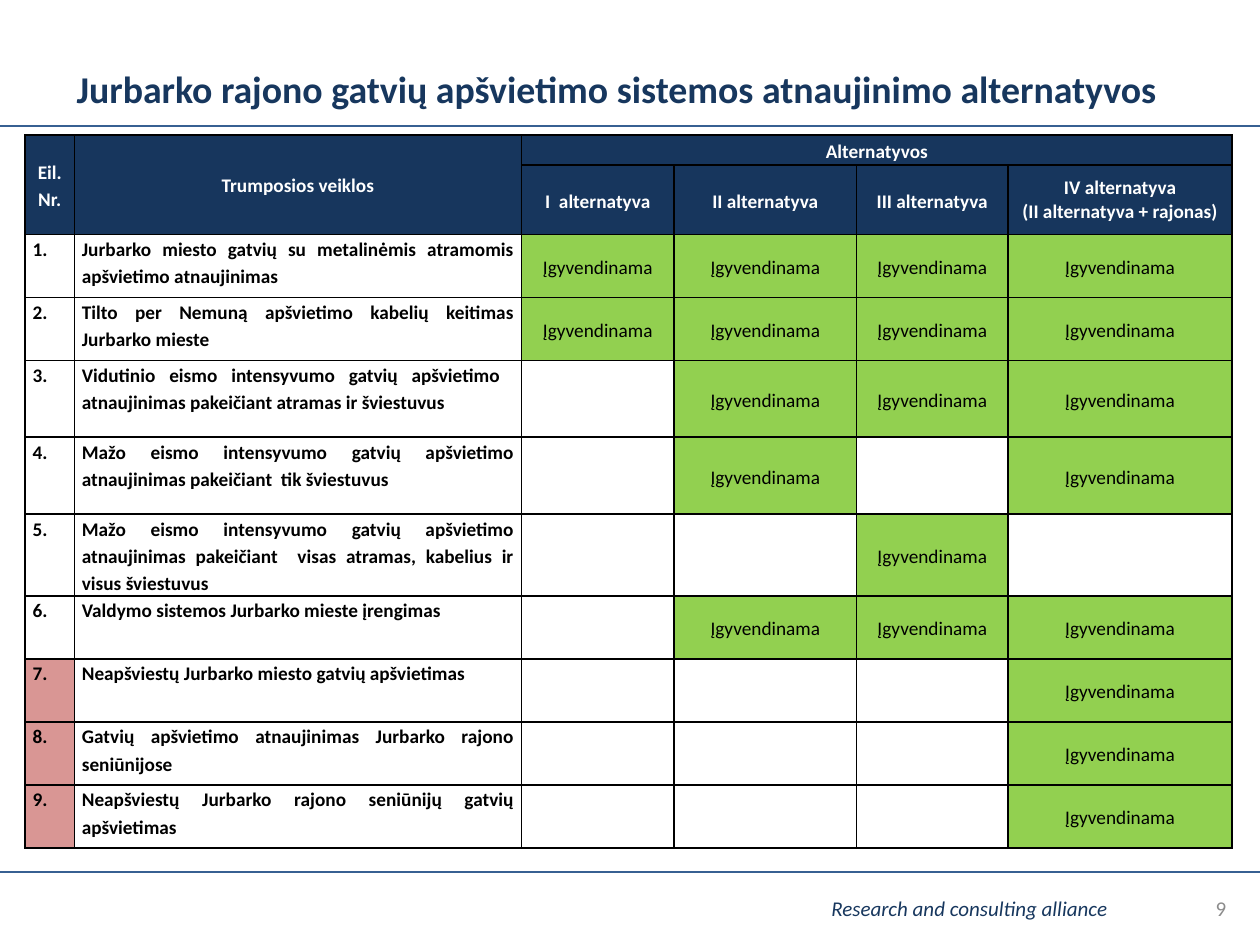
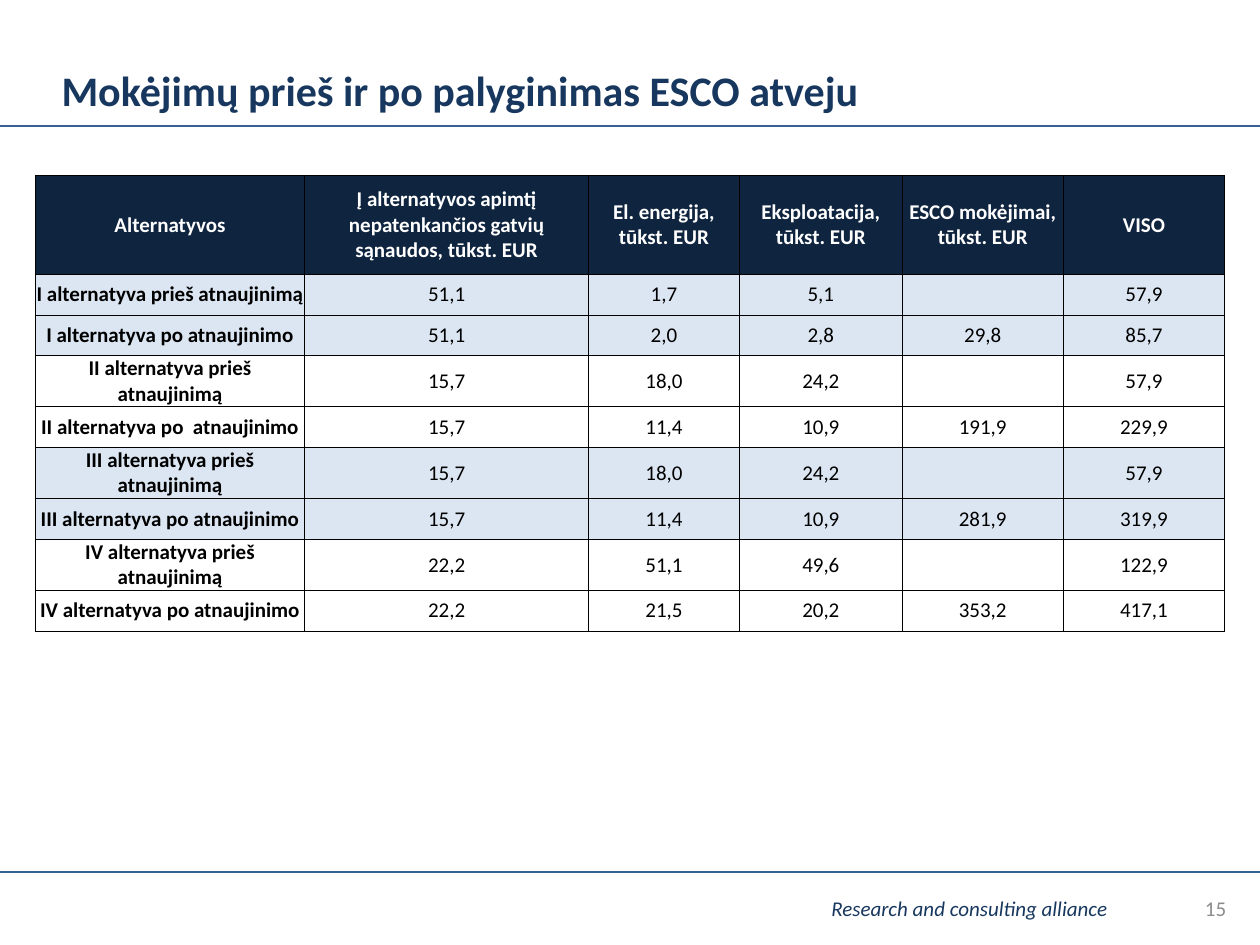
from dataclasses import dataclass

from lxml import etree
from pptx import Presentation
from pptx.dml.color import RGBColor
from pptx.enum.shapes import MSO_CONNECTOR
from pptx.enum.text import MSO_ANCHOR, PP_ALIGN
from pptx.oxml.ns import qn
from pptx.util import Inches, Pt

LEFT, CENTER, RIGHT, JUSTIFY = PP_ALIGN.LEFT, PP_ALIGN.CENTER, PP_ALIGN.RIGHT, PP_ALIGN.JUSTIFY
TOP, MIDDLE = MSO_ANCHOR.TOP, MSO_ANCHOR.MIDDLE
STRAIGHT = MSO_CONNECTOR.STRAIGHT

FONT = "Calibri"
COLOURS = {
    "navy": "17375E",
    "rule": "376092",
    "number": "8C8C8C",
    "activity_header": "17365D",
    "payment_header": "0F243E",
    "done": "92D050",
    "extra": "D99694",
    "band": "DCE6F2",
    "white": "FFFFFF",
    "black": "000000",
}


@dataclass(frozen=True)
class TextStyle:
    size: float
    colour: str = "black"
    bold: bool = False
    italic: bool = False
    align: PP_ALIGN = LEFT
    spacing: float = 1.0


@dataclass(frozen=True)
class CellStyle:
    text: TextStyle
    fill: str | None = None
    anchor: MSO_ANCHOR = MIDDLE


@dataclass(frozen=True)
class GridStyle:
    left: float
    top: float
    columns: tuple[float, ...]
    rows: tuple[float, ...]
    border: float
    side_margin: float


@dataclass(frozen=True)
class Activity:
    name: str
    done_in: tuple[int, ...]


@dataclass(frozen=True)
class Payment:
    name: str
    values: tuple[str, ...]


TAGLINE = TextStyle(12, "navy", italic=True)
PAGE_NUMBER = TextStyle(12, "number", align=RIGHT)

ACTIVITY_GRID = GridStyle(
    0.2, 1.07, (0.39, 3.55, 1.21, 1.45, 1.2, 1.78),
    (0.24, 0.55, 0.5, 0.5, 0.61, 0.61, 0.65, 0.5, 0.5, 0.5, 0.5), 1, 0.06)
PAYMENT_GRID = GridStyle(
    0.28, 1.39, (2.14, 2.25, 1.2, 1.29, 1.28, 1.28),
    (0.79, 0.32, 0.32, 0.41, 0.32, 0.41, 0.32, 0.41, 0.32), 0.5, 0)

ACTIVITY_HEADERS = (
    (0, 0, "Eil. Nr."),
    (0, 1, "Trumposios veiklos"),
    (0, 2, "Alternatyvos"),
    (1, 2, "I  alternatyva"),
    (1, 3, "II alternatyva"),
    (1, 4, "III alternatyva"),
)
FIRST_EXTRA = 7
ACTIVITIES = (
    Activity("Jurbarko miesto gatvių su metalinėmis atramomis apšvietimo atnaujinimas", (1, 2, 3, 4)),
    Activity("Tilto per Nemuną apšvietimo kabelių keitimas Jurbarko mieste", (1, 2, 3, 4)),
    Activity("Vidutinio eismo intensyvumo gatvių apšvietimo  atnaujinimas pakeičiant "
             "atramas ir šviestuvus", (2, 3, 4)),
    Activity("Mažo eismo intensyvumo gatvių apšvietimo atnaujinimas pakeičiant  tik šviestuvus", (2, 4)),
    Activity("Mažo eismo intensyvumo gatvių apšvietimo atnaujinimas pakeičiant  "
             "visas atramas, kabelius ir visus šviestuvus", (3,)),
    Activity("Valdymo sistemos Jurbarko mieste įrengimas", (2, 3, 4)),
    Activity("Neapšviestų Jurbarko miesto gatvių apšvietimas", (4,)),
    Activity("Gatvių apšvietimo atnaujinimas Jurbarko rajono seniūnijose", (4,)),
    Activity("Neapšviestų Jurbarko rajono seniūnijų gatvių apšvietimas", (4,)),
)

PAYMENT_HEADERS = (
    "Alternatyvos",
    "Į alternatyvos apimtį nepatenkančios gatvių sąnaudos, tūkst. EUR",
    "El. energija, tūkst. EUR",
    "Eksploatacija, tūkst. EUR",
    "ESCO mokėjimai, tūkst. EUR",
    "VISO",
)
PAYMENTS = (
    Payment("I alternatyva prieš atnaujinimą", ("51,1", "1,7", "5,1", "", "57,9")),
    Payment("I alternatyva po atnaujinimo", ("51,1", "2,0", "2,8", "29,8", "85,7")),
    Payment("II alternatyva prieš atnaujinimą", ("15,7", "18,0", "24,2", "", "57,9")),
    Payment("II alternatyva po  atnaujinimo", ("15,7", "11,4", "10,9", "191,9", "229,9")),
    Payment("III alternatyva prieš atnaujinimą", ("15,7", "18,0", "24,2", "", "57,9")),
    Payment("III alternatyva po atnaujinimo", ("15,7", "11,4", "10,9", "281,9", "319,9")),
    Payment("IV alternatyva prieš atnaujinimą", ("22,2", "51,1", "49,6", "", "122,9")),
    Payment("IV alternatyva po atnaujinimo", ("22,2", "21,5", "20,2", "353,2", "417,1")),
)


def colour(name: str) -> RGBColor:
    return RGBColor.from_string(COLOURS[name])


def write(frame, text: str, style: TextStyle) -> None:
    frame.text = text
    for paragraph in frame.paragraphs:
        paragraph.alignment = style.align
        paragraph.line_spacing = style.spacing
        for span in paragraph.runs:
            span.font.name = FONT
            span.font.size = Pt(style.size)
            span.font.bold = style.bold
            span.font.italic = style.italic
            span.font.color.rgb = colour(style.colour)


def add_text(page, left: float, top: float, width: float, height: float,
             text: str, style: TextStyle) -> None:
    box = page.shapes.add_textbox(Inches(left), Inches(top), Inches(width), Inches(height))
    box.text_frame.word_wrap = True
    box.text_frame.vertical_anchor = MIDDLE
    write(box.text_frame, text, style)


def add_rule(page, top: float) -> None:
    rule = page.shapes.add_connector(STRAIGHT, 0, Inches(top), Inches(10), Inches(top))
    rule.line.color.rgb = colour("rule")
    rule.line.width = Pt(1)
    etree.SubElement(rule._element.spPr, qn("a:effectLst"))


def add_page(deck, title: str, title_size: float, title_left: float, title_top: float, number: int):
    page = deck.slides.add_slide(deck.slide_layouts[6])
    for top in (1, 6.92):
        add_rule(page, top)
    add_text(page, 6.5, 7.06, 3.46, 0.29, "Research and consulting alliance", TAGLINE)
    add_text(page, 7.5, 7.01, 2.33, 0.4, str(number), PAGE_NUMBER)
    add_text(page, title_left, title_top, 9, 0.53, title, TextStyle(title_size, "navy", bold=True))
    return page


def add_borders(cell, width: float) -> None:
    properties = cell._tc.get_or_add_tcPr()
    for index, side in enumerate(("lnL", "lnR", "lnT", "lnB")):
        line = etree.Element(qn(f"a:{side}"), w=str(Pt(width)))
        fill = etree.SubElement(line, qn("a:solidFill"))
        etree.SubElement(fill, qn("a:srgbClr"), val=COLOURS["black"])
        properties.insert(index, line)


def add_grid(page, grid: GridStyle):
    frame = page.shapes.add_table(
        len(grid.rows), len(grid.columns), Inches(grid.left), Inches(grid.top),
        Inches(sum(grid.columns)), Inches(sum(grid.rows)))
    table = frame.table
    table.first_row = table.horz_banding = False
    for column, width in zip(table.columns, grid.columns):
        column.width = Inches(width)
    for row, height in zip(table.rows, grid.rows):
        row.height = Inches(height)
    for cell in table.iter_cells():
        cell.margin_left = cell.margin_right = Inches(grid.side_margin)
        cell.margin_top = cell.margin_bottom = 0
        cell.fill.background()
        add_borders(cell, grid.border)
    return table


def fill_cell(cell, text: str, style: CellStyle) -> None:
    cell.vertical_anchor = style.anchor
    if style.fill:
        cell.fill.solid()
        cell.fill.fore_color.rgb = colour(style.fill)
    if text:
        write(cell.text_frame, text, style.text)


def build_activities(deck) -> None:
    page = add_page(deck, "Jurbarko rajono gatvių apšvietimo sistemos atnaujinimo alternatyvos",
                    21.6, 0.51, 0.44, 9)
    table = add_grid(page, ACTIVITY_GRID)
    for column in (0, 1):
        table.cell(0, column).merge(table.cell(1, column))
    table.cell(0, 2).merge(table.cell(0, 5))

    header = CellStyle(TextStyle(11, "white", bold=True, align=CENTER, spacing=1.15), "activity_header")
    tight_header = CellStyle(TextStyle(11, "white", bold=True, align=CENTER), "activity_header")
    label_text = TextStyle(11, bold=True, align=JUSTIFY, spacing=1.15)
    label = CellStyle(label_text, "white", TOP)
    extra = CellStyle(label_text, "extra", TOP)
    done = CellStyle(TextStyle(11, align=CENTER, spacing=1.15), "done")

    for row, column, text in ACTIVITY_HEADERS:
        fill_cell(table.cell(row, column), text, header)
    fill_cell(table.cell(1, 5), "IV alternatyva\n(II alternatyva + rajonas)", tight_header)
    for number, activity in enumerate(ACTIVITIES, start=1):
        row = number + 1
        fill_cell(table.cell(row, 0), f"{number}.", extra if number >= FIRST_EXTRA else label)
        fill_cell(table.cell(row, 1), activity.name, label)
        for alternative in activity.done_in:
            fill_cell(table.cell(row, alternative + 1), "Įgyvendinama", done)


def build_payments(deck) -> None:
    page = add_page(deck, "Mokėjimų prieš ir po palyginimas ESCO atveju", 24, 0.39, 0.45, 15)
    table = add_grid(page, PAYMENT_GRID)
    header = CellStyle(TextStyle(12, "white", bold=True, align=CENTER), "payment_header")
    for column, text in enumerate(PAYMENT_HEADERS):
        fill_cell(table.cell(0, column), text, header)
    for index, payment in enumerate(PAYMENTS):
        band = "band" if index // 2 % 2 == 0 else None
        for column, text in enumerate((payment.name, *payment.values)):
            style = CellStyle(TextStyle(12, bold=column == 0, align=CENTER), band)
            fill_cell(table.cell(index + 1, column), text, style)


def main() -> None:
    deck = Presentation()
    deck.slide_width = Inches(10)
    deck.slide_height = Inches(7.5)
    build_activities(deck)
    build_payments(deck)
    deck.save("out.pptx")


if __name__ == "__main__":
    main()
